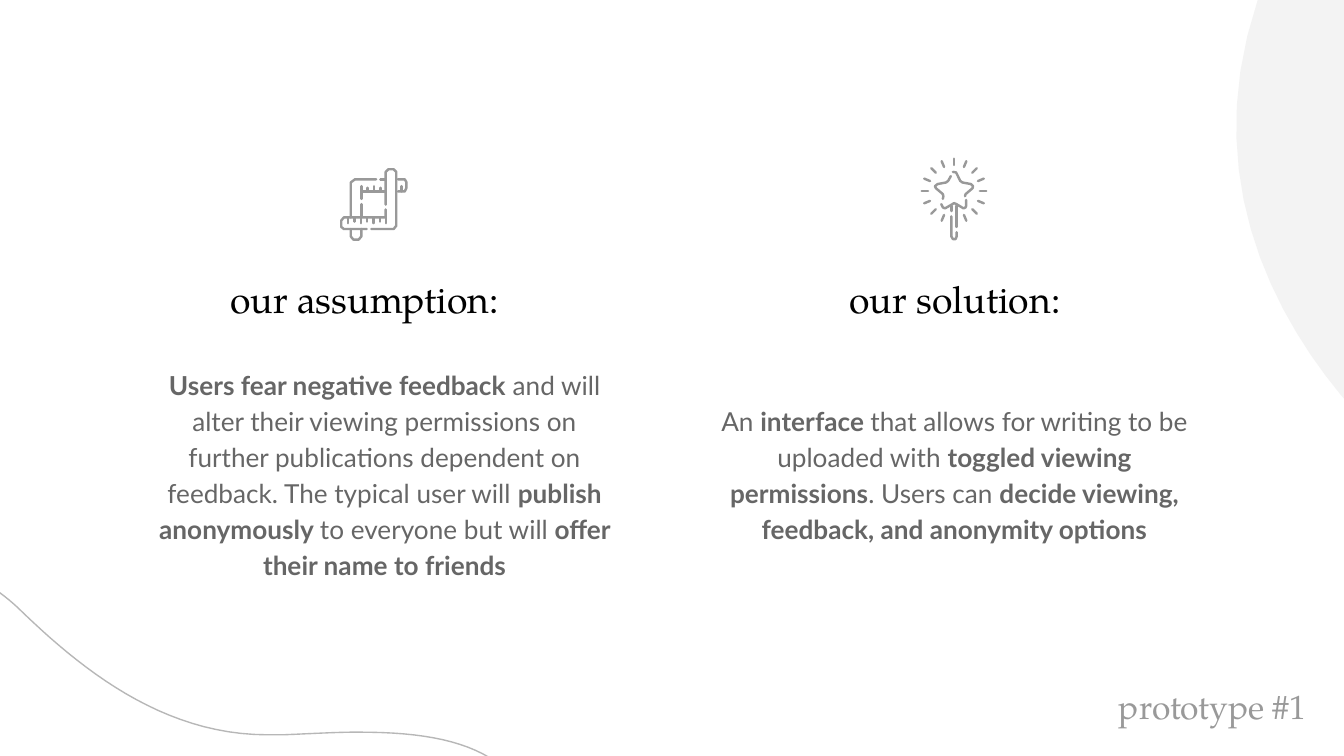
from math import cos, pi, sin

from pptx import Presentation
from pptx.dml.color import RGBColor
from pptx.enum.text import MSO_ANCHOR as Anchor, PP_ALIGN as Align
from pptx.util import Cm, Pt

SERIF, SANS = "TeX Gyre Pagella", "Lato"
BLACK, DARK, GREY, SILVER, PALE = "000000", "666666", "999999", "B7B7B7", "F3F3F3"
ICON_LINE = 1.3

# Bezier outlines in cm: start point, then (control, control, end) triples
BLOB_CURVES = [((27.13, 9.22), (21.89, 5.56), (23.77, 0))]
WAVE_CURVES = [
    ((9.63, 14.22), (8.66, 13.84), (6.76, 13.84)),
    ((6.35, 13.84), (5.87, 13.87), (5.36, 13.89)),
    ((5.26, 13.89), (5.16, 13.89), (5.05, 13.89)),
    ((3.05, 13.89), (1.5, 12.62), (0.33, 11.48)),
    ((-0.33, 10.87), (-1.07, 10.59), (-1.8, 10.59)),
    ((-2.67, 10.59), (-3.51, 11.02), (-4.04, 11.86)),
]

# Icon strokes in cm
WAND_CENTRE = (18.03, 3.61)
WAND_STROKES = [
    # star: bottom, right, left
    [(17.79, 3.86), (17.82, 3.92), (17.86, 3.94), (18, 3.86), (18.03, 3.84),
     (18.08, 3.86), (18.21, 3.94), (18.25, 3.92), (18.26, 3.89), (18.26, 3.78)],
    [(18.01, 3.25), (18.07, 3.26), (18.15, 3.42), (18.19, 3.45), (18.35, 3.48),
     (18.39, 3.52), (18.38, 3.56), (18.25, 3.67), (18.24, 3.71)],
    [(17.97, 3.33), (17.92, 3.42), (17.88, 3.45), (17.72, 3.48), (17.67, 3.52),
     (17.69, 3.56), (17.82, 3.67), (17.83, 3.71), (17.82, 3.76)],
    # stem and handle
    [(18.08, 3.89), (18.08, 4.29)],
    [(17.98, 3.89), (17.98, 3.99)],
    [(17.98, 4.09), (17.98, 4.47), (18.01, 4.52), (18.06, 4.52),
     (18.08, 4.47), (18.08, 4.39)],
]
UPRIGHT_RULER = [
    [(6.83, 3.76), (6.83, 3.62), (7.29, 3.62)],
    [(7.29, 3.87), (7.29, 3.25), (7.34, 3.2), (7.44, 3.2), (7.49, 3.25),
     (7.49, 4.27), (7.44, 4.33), (7.02, 4.33)],
    [(7.19, 3.39), (7.27, 3.39)],
    [(7.52, 3.39), (7.65, 3.39), (7.68, 3.44), (7.68, 3.56), (7.65, 3.62),
     (7.52, 3.62)],
    [(7.59, 3.62), (7.59, 3.52)],
]
LEVEL_RULER = [
    [(7.11, 3.39), (6.71, 3.39), (6.63, 3.45), (6.63, 4.11)],
    [(6.93, 4.33), (6.5, 4.33), (6.45, 4.29), (6.45, 4.17), (6.5, 4.11),
     (7.29, 4.11), (7.29, 3.96)],
    [(6.83, 4.11), (6.83, 3.86)],
    [(6.63, 4.33), (6.63, 4.47), (6.68, 4.53), (6.78, 4.53), (6.83, 4.47),
     (6.83, 4.33)],
]

# Body text as runs of (text, bold)
ASSUMPTION = [
    ("Users fear negative feedback", True),
    (" and will alter their viewing permissions on further publications "
     "dependent on feedback. The typical user will ", False),
    ("publish anonymously ", True),
    ("to everyone but will", False),
    (" offer their name to friends", True),
]
SOLUTION = [
    ("An ", False),
    ("interface ", True),
    ("that allows for writing to be uploaded with ", False),
    ("toggled viewing permissions", True),
    (". Users can ", False),
    ("decide viewing, feedback, and anonymity options", True),
]


def colour(value):
    return RGBColor.from_string(value)


def trace(start, curves, steps=24):
    """Turn a chain of Bezier curves into points."""
    points = [start]
    for first, second, end in curves:
        origin = points[-1]
        for step in range(1, steps + 1):
            t = step / steps
            u = 1 - t
            points.append(tuple(
                u**3 * a + 3 * u * u * t * b + 3 * u * t * t * c + t**3 * d
                for a, b, c, d in zip(origin, first, second, end)))
    return points


def add_outline(shapes, strokes, fill=None, line=None, width=0.75, close=False):
    """Draw one freeform made of one or more strokes."""
    builder = None
    for stroke in strokes:
        start, *rest = [(Cm(x), Cm(y)) for x, y in stroke]
        if builder is None:
            builder = shapes.build_freeform(*start)
        else:
            builder.move_to(*start)
        builder.add_line_segments(rest, close=close)
    shape = builder.convert_to_shape()
    shape.shadow.inherit = False
    if fill:
        shape.fill.solid()
        shape.fill.fore_color.rgb = colour(fill)
    else:
        shape.fill.background()
    if line:
        shape.line.color.rgb = colour(line)
        shape.line.width = Pt(width)
        shape.line._get_or_add_ln().set("cap", "rnd")
    else:
        shape.line.fill.background()


def add_text(page, left, top, width, height, runs, font, size, tint, spacing=1.0):
    box = page.shapes.add_textbox(Cm(left), Cm(top), Cm(width), Cm(height))
    frame = box.text_frame
    frame.word_wrap = True
    frame.vertical_anchor = Anchor.MIDDLE
    frame.margin_left = frame.margin_right = Cm(0.25)
    frame.margin_top = frame.margin_bottom = Cm(0.25)
    para = frame.paragraphs[0]
    para.alignment = Align.CENTER
    para.line_spacing = spacing
    para.font.name = font
    para.font.size = Pt(size)
    para.font.color.rgb = colour(tint)
    for text, bold in runs:
        span = para.add_run()
        span.text = text
        span.font.bold = bold


def add_title(page, left, top, text, size=20, tint=BLACK):
    add_text(page, left, top, 6.22, 1.02, [(text, False)], SERIF, size, tint)


def add_body(page, left, runs):
    add_text(page, left, 6.32, 9.4, 5.23, runs, SANS, 14, DARK, 1.15)


def ray(index):
    """One of sixteen directions around the wand, clockwise from straight down."""
    x, y = WAND_CENTRE
    angle = pi / 2 + index * pi / 8
    return [(x + r * cos(angle), y + r * sin(angle)) for r in (0.49, 0.61)]


def ticks(left, count, base, long, short):
    """Ruler marks, long and short in turn."""
    return [[(left + 0.12 * i, base), (left + 0.12 * i, base + (short if i % 2 else long))]
            for i in range(count)]


def add_wand(page):
    group = page.shapes.add_group_shape()
    # The stem takes the place of the ray pointing down
    for stroke in [ray(i) for i in range(1, 16)] + WAND_STROKES:
        add_outline(group.shapes, [stroke], line=GREY, width=ICON_LINE)


def add_rulers(page):
    group = page.shapes.add_group_shape()
    upright = UPRIGHT_RULER + ticks(6.83, 4, 3.62, -0.1, -0.07)
    level = LEVEL_RULER + ticks(6.58, 7, 4.11, 0.11, 0.08)
    for strokes in (upright, level):
        add_outline(group.shapes, strokes, line=GREY, width=ICON_LINE)


def main():
    deck = Presentation()
    deck.slide_width, deck.slide_height = Cm(25.4), Cm(14.29)
    page = deck.slides.add_slide(deck.slide_layouts[6])

    # Background shapes
    blob = trace((27.33, 9.32), BLOB_CURVES) + [(27.33, 0)]
    wave = trace((10.24, 15.44), WAVE_CURVES) + [(-4.04, 15.44)]
    add_outline(page.shapes, [blob], fill=PALE, close=True)
    add_outline(page.shapes, [wave], line=SILVER, close=True)

    # Two columns
    add_body(page, 2.57, ASSUMPTION)
    add_title(page, 3.78, 5.13, "our assumption:")
    add_title(page, 14.94, 5.13, "our solution:")
    add_body(page, 13.34, SOLUTION)

    # Icons
    add_wand(page)
    add_rulers(page)

    # Corner label
    add_title(page, 19.81, 12.83, "prototype #1", 18, GREY)

    deck.save("out.pptx")


if __name__ == "__main__":
    main()
